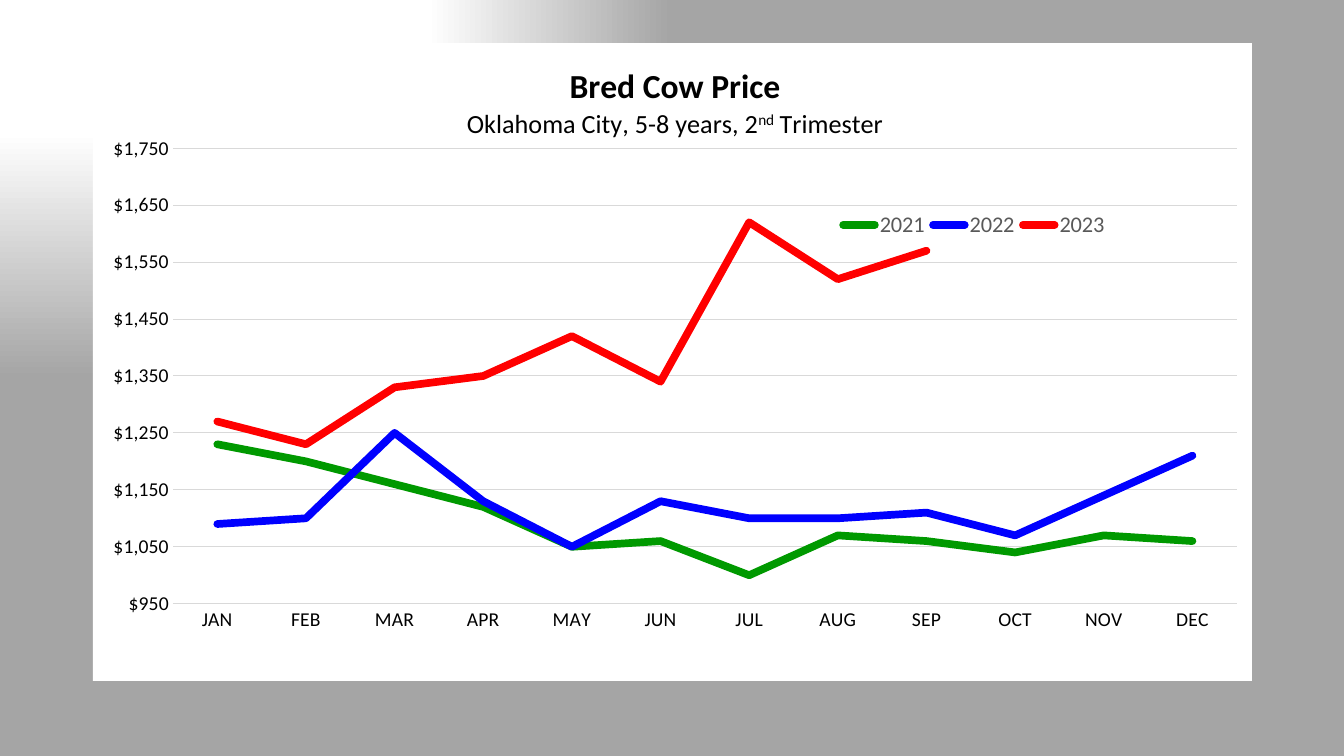
import pptx
import pptx.chart.data
import pptx.dml.color
import pptx.enum.chart
import pptx.oxml
import pptx.oxml.ns
import pptx.util

RGB = pptx.dml.color.RGBColor
WHITE = RGB(0xFF, 0xFF, 0xFF)
GRAY = RGB(0xA5, 0xA5, 0xA5)
BLACK = RGB(0, 0, 0)
GRID = RGB(0xD9, 0xD9, 0xD9)
DARK = RGB(0x59, 0x59, 0x59)
GREEN = RGB(0, 0x99, 0)
BLUE = RGB(0, 0, 0xFF)
RED = RGB(0xFF, 0, 0)

FONT = "Calibri"
MONTHS = "JAN FEB MAR APR MAY JUN JUL AUG SEP OCT NOV DEC".split()
PRICES = {
    "2021": (GREEN, [1230, 1200, 1160, 1120, 1050, 1060,
                     1000, 1070, 1060, 1040, 1070, 1060]),
    "2022": (BLUE, [1090, 1100, 1250, 1130, 1050, 1130,
                    1100, 1100, 1110, 1070, 1140, 1210]),
    "2023": (RED, [1270, 1230, 1330, 1350, 1420, 1340,
                   1620, 1520, 1570, None, None, None]),
}


def px(n):
    return pptx.util.Emu(round(n * 914400 / 100.8))


def style(font, size, color=BLACK, bold=False):
    font.name, font.size, font.bold = FONT, pptx.util.Pt(size), bold
    font.color.rgb = color


def write(para, text, size=18.7, color=BLACK, bold=False, raised=False):
    run = para.add_run()
    run.text = text
    style(run.font, size, color, bold)
    if raised:
        run.font._element.set("baseline", "30000")


def build(tag, body):
    names = pptx.oxml.ns.nsdecls("a", "c")
    return pptx.oxml.parse_xml(f"<{tag} {names}>{body}</{tag}>")


def solid(color):
    return f'<a:solidFill><a:srgbClr val="{color}"/></a:solidFill>'


def place(part, index, inner=False, **spots):
    """Set a manual layout; spots are shares of the chart area."""
    for old in part.findall(pptx.oxml.ns.qn("c:layout")):
        part.remove(old)
    body = '<c:layoutTarget val="inner"/>' if inner else ""
    body += "".join(f'<c:{key}Mode val="edge"/>' for key in "xy")
    body += "".join(f'<c:{key} val="{val}"/>' for key, val in spots.items())
    part.insert(index, build("c:layout", f"<c:manualLayout>{body}</c:manualLayout>"))


def paint(slide):
    # Background shaded out from the top left corner
    fill = slide.background.fill
    fill.gradient()
    grad = slide.background._cSld.find(".//" + pptx.oxml.ns.qn("a:gradFill"))
    stops = "".join(
        f'<a:gs pos="{pos * 1000}"><a:srgbClr val="{color}"/></a:gs>'
        for pos, color in ((0, WHITE), (35, WHITE), (100, GRAY)))
    grad.getparent().replace(grad, build(
        "a:gradFill", f'<a:gsLst>{stops}</a:gsLst><a:path path="rect">'
        '<a:fillToRect r="100000" b="100000"/></a:path>'))


def head(chart):
    # Two-line title
    frame = chart.chart_title.text_frame
    write(frame.paragraphs[0], "Bred Cow Price", size=24, bold=True)
    line = frame.add_paragraph()
    write(line, "Oklahoma City, 5-8 years, 2")
    write(line, "nd", raised=True)
    write(line, " Trimester")
    chart.chart_title.include_in_layout = False
    place(chart.chart_title._element, 1, x=0.32, y=0.03)


def axes(chart):
    # Months below, dollars at the left
    none = pptx.enum.chart.XL_TICK_MARK.NONE
    for axis in (chart.category_axis, chart.value_axis):
        axis.major_tick_mark = axis.minor_tick_mark = none
        style(axis.tick_labels.font, 14)
    value = chart.value_axis
    value.minimum_scale, value.maximum_scale = 950, 1750
    value.major_unit = 100
    value.tick_labels.number_format = '"$"#,##0'
    value.tick_labels.number_format_is_linked = False
    value.format.line.fill.background()
    for line in (chart.category_axis.format.line, value.major_gridlines.format.line):
        line.color.rgb = GRID
        line.width = pptx.util.Pt(0.75)


def key(chart):
    # Legend over the plot
    chart.has_legend = True
    legend = chart.legend
    legend.position = pptx.enum.chart.XL_LEGEND_POSITION.BOTTOM
    legend.include_in_layout = False
    style(legend.font, 16, DARK)
    place(legend._element, 1, x=0.64, y=0.25, w=0.24, h=0.07)


def graph(slide, left, top, width, height):
    data = pptx.chart.data.CategoryChartData()
    data.categories = MONTHS
    for year, (_, vals) in PRICES.items():
        data.add_series(year, vals)
    box = map(px, (left, top, width, height))
    kind = pptx.enum.chart.XL_CHART_TYPE.LINE
    chart = slide.shapes.add_chart(kind, *box, data).chart
    style(chart.font, 10)
    chart.plots[0].vary_by_categories = False

    # White panel and plot area
    core = chart._chartSpace.chart
    core.addnext(build("c:spPr", solid(WHITE) + "<a:ln><a:noFill/></a:ln>"))
    place(core.plotArea, 0, inner=True, x=0.069, y=0.165, w=0.918, h=0.714)

    # One thick round-ended line per year
    for series, (color, _) in zip(chart.plots[0].series, PRICES.values()):
        series.smooth = False
        series.marker.style = pptx.enum.chart.XL_MARKER_STYLE.NONE
        line = series.format.line
        line.color.rgb = color
        line.width = pptx.util.Pt(5.5)
        edge = series._element.spPr.find(pptx.oxml.ns.qn("a:ln"))
        edge.set("cap", "rnd")
        edge.append(build("a:round", ""))
    head(chart)
    axes(chart)
    key(chart)


def main():
    deck = pptx.Presentation()
    deck.slide_width, deck.slide_height = px(1344), px(756)
    slide = deck.slides.add_slide(deck.slide_layouts[6])
    paint(slide)
    graph(slide, 93, 43, 1159, 638)
    deck.save("out.pptx")


if __name__ == "__main__":
    main()
